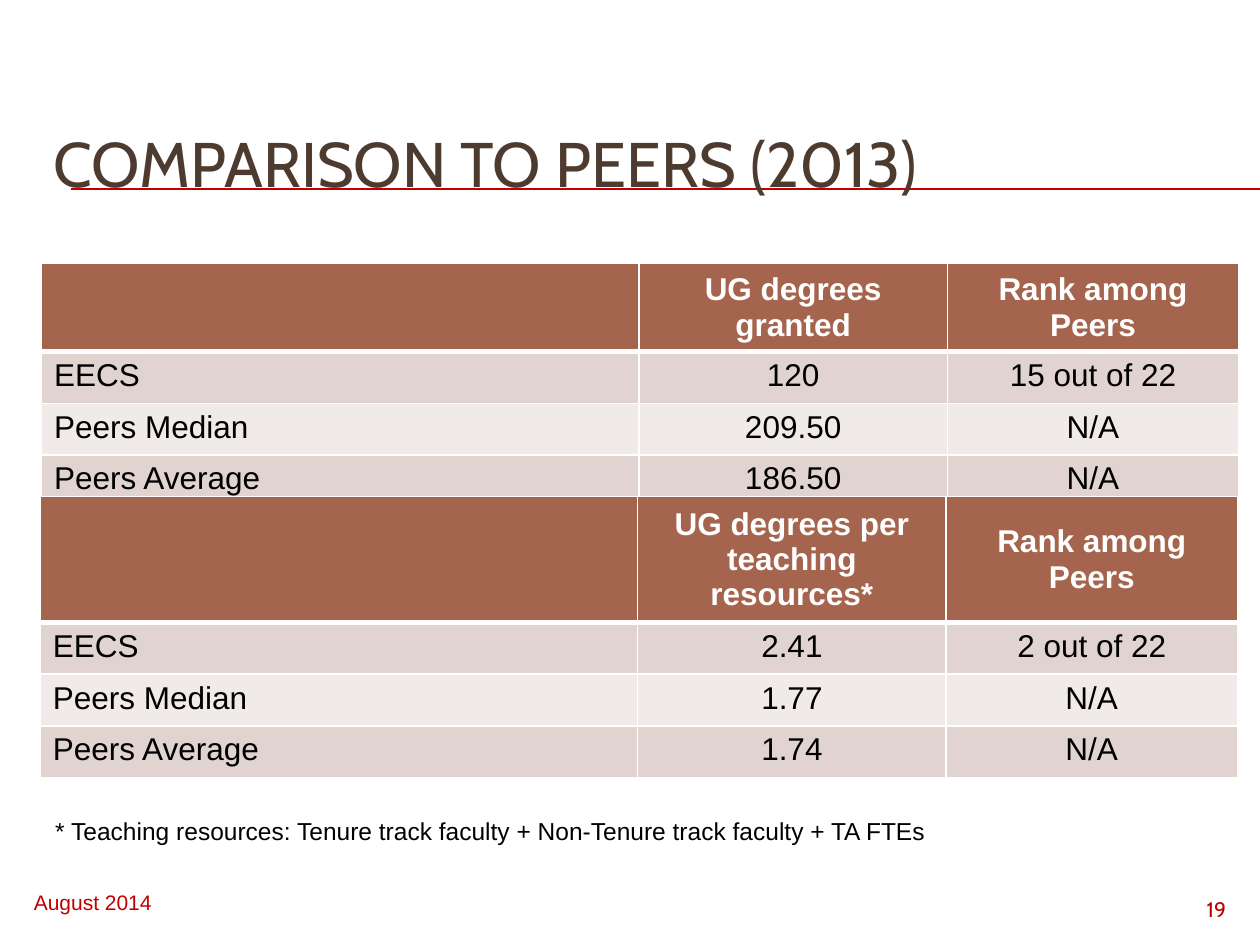
from lxml.etree import SubElement
from pptx import Presentation
from pptx.dml.color import RGBColor
from pptx.enum.shapes import MSO_CONNECTOR as Connector
from pptx.enum.text import MSO_ANCHOR as Anchor, PP_ALIGN as Align
from pptx.oxml.ns import qn
from pptx.util import Inches, Pt

COLORS = {
    "title": "4E3B30",
    "accent": "C00000",
    "header": "A5644E",
    "band_dark": "E1D3D0",
    "band_light": "F0EAE9",
    "white": "FFFFFF",
    "black": "000000",
}
GRID_COLUMNS, GRID_ROWS = 100, 75
UNIT = Inches(0.1)
COLUMN_WIDTHS = (47.4, 24.5, 23.1)
ROW_HEIGHT = 4.1

DEGREES = [
    ("", "UG degrees granted", "Rank among Peers"),
    ("EECS", "120", "15 out of 22"),
    ("Peers Median", "209.50", "N/A"),
    ("Peers Average", "186.50", "N/A"),
]
DEGREES_PER_RESOURCE = [
    ("", "UG degrees per teaching resources*", "Rank among Peers"),
    ("EECS", "2.41", "2 out of 22"),
    ("Peers Median", "1.77", "N/A"),
    ("Peers Average", "1.74", "N/A"),
]


def grid(*units):
    """Turn grid columns or rows into slide lengths."""
    return [round(unit * UNIT) for unit in units]


def rgb(name):
    return RGBColor.from_string(COLORS[name])


def write(frame, text, size, color, font="Arial", bold=False, align=Align.LEFT):
    paragraph = frame.paragraphs[0]
    paragraph.alignment = align
    run = paragraph.add_run()
    run.text = text
    run.font.size = Pt(size)
    run.font.name = font
    run.font.bold = bold
    run.font.color.rgb = rgb(color)


def add_label(slide, box, text, size, color, wrap=True, **style):
    frame = slide.shapes.add_textbox(*grid(*box)).text_frame
    frame.word_wrap = wrap
    frame.vertical_anchor = Anchor.MIDDLE
    write(frame, text, size, color, **style)


def add_rule(slide, left, right, y):
    rule = slide.shapes.add_connector(Connector.STRAIGHT, *grid(left, y, right, y))
    rule.line.color.rgb = rgb("accent")
    rule.line.width = Pt(0.75)
    SubElement(rule._element.spPr, qn("a:effectLst"))


def set_borders(cell, top, bottom):
    properties = cell._tc.get_or_add_tcPr()
    for side, width in (("L", 1), ("R", 1), ("T", top), ("B", bottom)):
        line = SubElement(properties, qn(f"a:ln{side}"), w=str(Pt(width)))
        fill = SubElement(line, qn("a:solidFill"))
        SubElement(fill, qn("a:srgbClr"), val=COLORS["white"])


def style_cell(cell, row, column, text):
    is_header = row == 0
    set_borders(cell, top=3 if row == 1 else 1, bottom=3 if is_header else 1)
    band = "band_dark" if row % 2 else "band_light"
    cell.fill.solid()
    cell.fill.fore_color.rgb = rgb("header" if is_header else band)
    if is_header:
        cell.vertical_anchor = Anchor.MIDDLE
    if text:
        write(cell.text_frame, text, 18, "white" if is_header else "black",
              bold=is_header, align=Align.CENTER if column else Align.LEFT)


def add_peer_table(slide, left, top, records):
    """Add a comparison table whose header row grows to fit its text."""
    box = grid(left, top, sum(COLUMN_WIDTHS), ROW_HEIGHT * len(records))
    table = slide.shapes.add_table(len(records), len(COLUMN_WIDTHS), *box).table
    table.horz_banding = False
    for column, width in zip(table.columns, grid(*COLUMN_WIDTHS)):
        column.width = width
    for row, record in enumerate(records):
        table.rows[row].height = round(ROW_HEIGHT * UNIT)
        for column, text in enumerate(record):
            style_cell(table.cell(row, column), row, column, text)


def main():
    deck = Presentation()
    deck.slide_width, deck.slide_height = grid(GRID_COLUMNS, GRID_ROWS)
    slide = deck.slides.add_slide(deck.slide_layouts[6])

    add_rule(slide, 5.6, GRID_COLUMNS, 15)
    add_label(slide, (3.3, 8.3, 95, 9.2), "COMPARISON TO PEERS (2013)", 36,
              "title", font="Cabin")
    add_peer_table(slide, 3.3, 20.9, DEGREES)
    add_label(slide, (1.7, 70, 27.5, 3.2), "August 2014", 12, "accent")
    add_label(slide, (90, 70.8, 8.3, 2.7), "19", 12, "accent",
              font="Cabin", align=Align.RIGHT)
    add_peer_table(slide, 3.2, 39.4, DEGREES_PER_RESOURCE)
    add_label(slide, (3.4, 64.2, 71.6, 3.4),
              "* Teaching resources: Tenure track faculty"
              " + Non-Tenure track faculty + TA FTEs",
              14, "black", wrap=False)

    deck.save("out.pptx")


if __name__ == "__main__":
    main()
